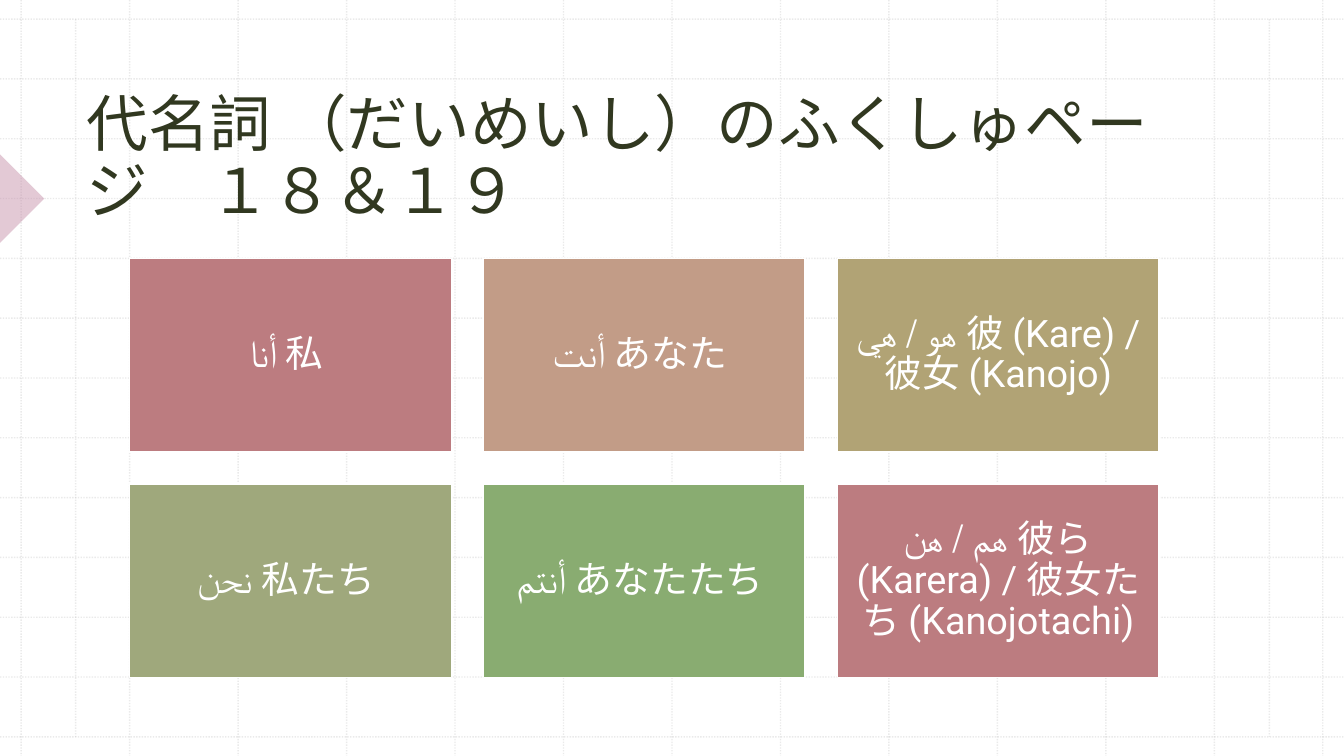
from pptx import Presentation
from pptx.dml.color import RGBColor as Rgb
from pptx.enum.dml import MSO_LINE as Dash
from pptx.enum.shapes import MSO_CONNECTOR as Link, MSO_SHAPE as Form
from pptx.enum.text import MSO_ANCHOR as Anchor, MSO_AUTO_SIZE as Fit, PP_ALIGN as Align
from pptx.oxml.ns import qn
from pptx.util import Inches, Pt
from lxml.etree import SubElement

WIDE, HIGH = 13.33, 7.5
LEFT, TOP = 0.21, 0.19
COL = (WIDE - 2 * LEFT) / 12
ROW = (HIGH - 2 * TOP) / 12


def paint(fill, tone, alpha=100):
    fill.solid()
    fill.fore_color.rgb = Rgb.from_string(tone)
    if alpha < 100:
        color = next(fill.fore_color._xFill.iter(qn("a:srgbClr")))
        SubElement(color, qn("a:alpha")).set("val", str(alpha * 1000))


def write(shape, text, size, tone, align):
    frame = shape.text_frame
    frame.text = text
    frame.word_wrap = True
    frame.auto_size = Fit.NONE
    para = frame.paragraphs[0]
    para.alignment = align
    para.line_spacing = 0.9
    font = para.runs[0].font
    font.name, font.size = "Roboto", Pt(size)
    paint(font.fill, tone)


deck = Presentation()
deck.slide_width, deck.slide_height = Inches(WIDE), Inches(HIGH)
slide = deck.slides.add_slide(deck.slide_layouts[5])
shapes = slide.shapes
paint(slide.background.fill, "FFFFFF")

rules = [(LEFT + i * COL, 0, LEFT + i * COL, HIGH) for i in range(13)]
rules += [(0, TOP + i * ROW, WIDE, TOP + i * ROW) for i in range(13)]
rules += [(x, TOP, x, HIGH - TOP) for x in (0.75, 12.59)]
for ends in rules:
    rule = shapes.add_connector(Link.STRAIGHT, *map(Inches, ends))
    rule.line.width = Pt(1)
    paint(rule.line.fill, "BCBCBC", 30)
    rule.line.dash_style = Dash.ROUND_DOT
    SubElement(rule.element.spPr, qn("a:effectLst"))

side = 0.62
mark = shapes.add_shape(Form.RIGHT_TRIANGLE, Inches(-side / 2), Inches(1.66), Inches(side), Inches(side))
mark.rotation = 225
mark.shadow.inherit = False
mark.line.fill.background()
paint(mark.fill, "C894AD", 50)

title = shapes.title
title.left, title.top, title.width, title.height = map(Inches, (0.76, 0.79, 11.29, 1.51))
write(title, "代名詞 （だいめいし）のふくしゅページ　１８＆１９", 44, "313820", Align.LEFT)
title.text_frame.vertical_anchor = Anchor.BOTTOM
title.element.getparent().append(title.element)

cards = [
    ("أنا 私 ", "BC7C80"),
    ("أنت あなた ", "C29C87"),
    ("هو / هي 彼 (Kare) / 彼女 (Kanojo)", "B1A375"),
    ("نحن 私たち ", "9FA87C"),
    ("أنتم あなたたち ", "89AC71"),
    ("هم / هن 彼ら (Karera) / 彼女たち (Kanojotachi)", "BC7C80"),
]
wide, high, gap = 3.19, 1.92, 0.32
for i, (text, tone) in enumerate(cards):
    row, col = divmod(i, 3)
    x = LEFT + COL + col * (wide + gap)
    y = TOP + 4 * ROW + row * (high + gap)
    card = shapes.add_shape(Form.RECTANGLE, *map(Inches, (x, y, wide, high)))
    card.shadow.inherit = False
    paint(card.fill, tone)
    paint(card.line.fill, "FFFFFF")
    card.line.width = Pt(1)
    write(card, text, 27, "FFFFFF", Align.CENTER)
    frame = card.text_frame
    frame.vertical_anchor = Anchor.MIDDLE
    frame.margin_left = frame.margin_right = Inches(0.11)
    frame.margin_top = frame.margin_bottom = Inches(0.11)

deck.save("out.pptx")
